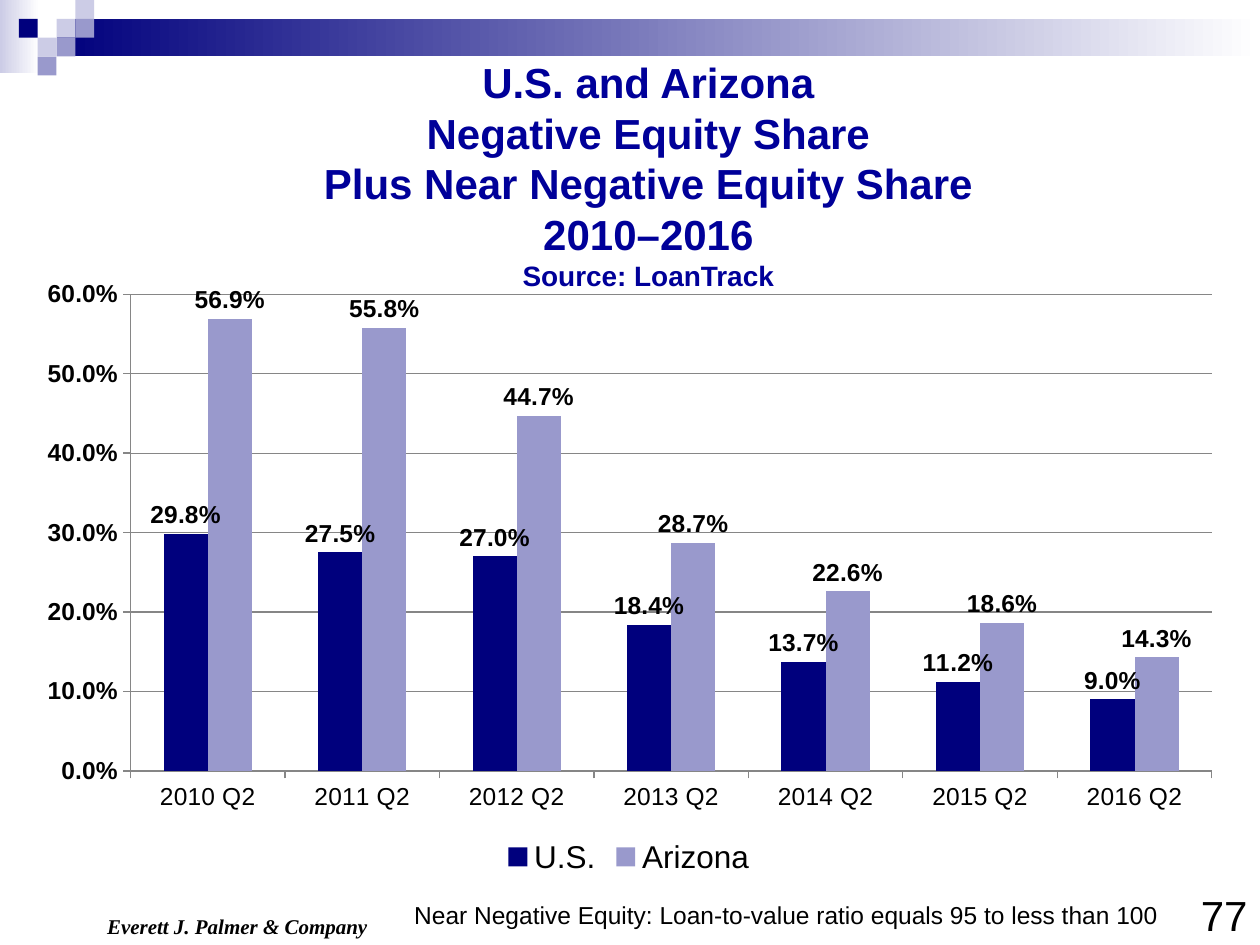
from dataclasses import dataclass

import pptx
import pptx.chart.data
import pptx.dml.color
import pptx.enum.chart
import pptx.enum.shapes
import pptx.enum.text
import pptx.oxml
import pptx.oxml.ns
import pptx.util
from pptx.util import Cm, Pt

COLOURS = {
    "navy": "00007D",
    "title": "000099",
    "lilac": "9999CC",
    "pale": "CCCCE6",
    "white": "FFFFFF",
    "black": "000000",
    "grid": "868686",
}
ALIGN = pptx.enum.text.PP_ALIGN
TILE = 0.38  # side of a corner tile, cm


@dataclass
class Box:
    left: float
    top: float
    width: float
    height: float

    def lengths(self) -> tuple:
        return Cm(self.left), Cm(self.top), Cm(self.width), Cm(self.height)


@dataclass
class Tile:
    column: int
    row: int
    colour: str


@dataclass
class Caption:
    text: str
    box: Box
    size: int
    family: str = "Arial"
    emphasis: bool = False
    align: ALIGN = ALIGN.LEFT


@dataclass
class Region:
    name: str
    shares: tuple
    colour: str


GRADIENTS = [
    (Box(0, 0, 0.79, 1.47), "pale"),
    (Box(3 * TILE, TILE, 24.26, 2 * TILE), "navy"),
]
TILES = [
    Tile(3, 1, "pale"), Tile(4, 0, "pale"), Tile(4, 1, "lilac"),
    Tile(2, 2, "pale"), Tile(1, 1, "navy"), Tile(3, 2, "lilac"),
    Tile(2, 3, "lilac"),
]
TITLE_LINES = [
    "U.S. and Arizona",
    "Negative Equity Share",
    "Plus Near Negative Equity Share",
    "2010–2016",
]
SOURCE = "Source: LoanTrack"
CAPTIONS = [
    Caption("Everett J. Palmer & Company", Box(1.91, 18.29, 6.35, 0.76), 12,
            "Times New Roman", emphasis=True),
    Caption("Near Negative Equity: Loan-to-value ratio equals 95 to less than 100",
            Box(8.1, 18.01, 15.57, 0.86), 14),
    Caption("77", Box(22.12, 17.81, 3.28, 1.27), 24, align=ALIGN.RIGHT),
]
QUARTERS = [f"{year} Q2" for year in range(2010, 2017)]
REGIONS = [
    Region("U.S.", (0.298, 0.275, 0.27, 0.184, 0.137, 0.112, 0.09), "navy"),
    Region("Arizona", (0.569, 0.558, 0.447, 0.287, 0.226, 0.186, 0.143), "lilac"),
]
PLOT_LAYOUT = {"x": 0.09, "y": 0.04, "w": 0.89, "h": 0.78}


def rgb(name: str) -> pptx.dml.color.RGBColor:
    return pptx.dml.color.RGBColor.from_string(COLOURS[name])


def style_font(font, size: int, colour: str = "black", bold: bool = False,
               family: str = "Arial") -> None:
    font.size = Pt(size)
    font.name = family
    font.bold = bold
    font.color.rgb = rgb(colour)


def add_rectangle(slide, box: Box):
    rectangle = slide.shapes.add_shape(
        pptx.enum.shapes.MSO_SHAPE.RECTANGLE, *box.lengths())
    rectangle.shadow.inherit = False
    rectangle.line.fill.background()
    return rectangle


def add_decoration(slide) -> None:
    for box, colour in GRADIENTS:
        fill = add_rectangle(slide, box).fill
        fill.gradient()
        fill.gradient_angle = 0
        for stop, position, name in zip(fill.gradient_stops, (0, 1), (colour, "white")):
            stop.position = position
            stop.color.rgb = rgb(name)
    for tile in TILES:
        box = Box(tile.column * TILE, tile.row * TILE, TILE, TILE)
        fill = add_rectangle(slide, box).fill
        fill.solid()
        fill.fore_color.rgb = rgb(tile.colour)


def add_title(slide) -> None:
    title = slide.shapes.title
    title.left, title.top, title.width, title.height = Box(6.1, 1.02, 13.94, 5.05).lengths()
    frame = title.text_frame
    frame.auto_size = pptx.enum.text.MSO_AUTO_SIZE.NONE
    frame.vertical_anchor = pptx.enum.text.MSO_ANCHOR.TOP
    frame.word_wrap = False
    frame.text = "\n".join(TITLE_LINES)
    for paragraph in frame.paragraphs:
        paragraph.alignment = ALIGN.CENTER
        style_font(paragraph.font, 24, "title", bold=True)
    years = frame.paragraphs[-1]
    years.add_line_break()
    source = years.add_run()
    source.text = SOURCE
    source.font.size = Pt(16)


def add_caption(slide, caption: Caption) -> None:
    frame = slide.shapes.add_textbox(*caption.box.lengths()).text_frame
    frame.word_wrap = True
    frame.text = caption.text
    paragraph = frame.paragraphs[0]
    paragraph.alignment = caption.align
    style_font(paragraph.font, caption.size, bold=caption.emphasis, family=caption.family)
    paragraph.font.italic = caption.emphasis


def fix_plot_area(chart) -> None:
    """Place the inner plot area by fractions of the chart."""
    plot_area = chart.plots[0]._element.getparent()
    for layout in plot_area.findall(pptx.oxml.ns.qn("c:layout")):
        plot_area.remove(layout)
    modes = "".join(f'<c:{key}Mode val="edge"/>' for key in "xy")
    sizes = "".join(f'<c:{key} val="{value}"/>' for key, value in PLOT_LAYOUT.items())
    plot_area.insert(0, pptx.oxml.parse_xml(
        f'<c:layout {pptx.oxml.ns.nsdecls("c")}><c:manualLayout>'
        f'<c:layoutTarget val="inner"/>{modes}{sizes}</c:manualLayout></c:layout>'))


def add_equity_chart(slide) -> None:
    data = pptx.chart.data.CategoryChartData(number_format="0.0%")
    data.categories = QUARTERS
    for region in REGIONS:
        data.add_series(region.name, region.shares)
    chart = slide.shapes.add_chart(
        pptx.enum.chart.XL_CHART_TYPE.COLUMN_CLUSTERED,
        *Box(0.43, 5.44, 24.49, 12.32).lengths(), data).chart
    style_font(chart.font, 18)
    chart.has_title = False
    chart.has_legend = True
    chart.legend.position = pptx.enum.chart.XL_LEGEND_POSITION.BOTTOM
    chart.legend.include_in_layout = False
    style_font(chart.legend.font, 18)

    for axis, bold in ((chart.category_axis, False), (chart.value_axis, True)):
        axis.major_tick_mark = pptx.enum.chart.XL_TICK_MARK.OUTSIDE
        axis.format.line.color.rgb = rgb("grid")
        style_font(axis.tick_labels.font, 14, bold=bold)
    shares = chart.value_axis
    shares.minimum_scale, shares.maximum_scale, shares.major_unit = 0, 0.6, 0.1
    shares.major_gridlines.format.line.color.rgb = rgb("grid")
    shares.tick_labels.number_format = "0.0%"
    shares.tick_labels.number_format_is_linked = False

    columns = chart.plots[0]
    columns.gap_width = 150
    columns.overlap = 0
    columns.vary_by_categories = False
    for series, region in zip(columns.series, REGIONS):
        series.format.fill.solid()
        series.format.fill.fore_color.rgb = rgb(region.colour)
        labels = series.data_labels
        labels.show_value = True
        labels.position = pptx.enum.chart.XL_LABEL_POSITION.OUTSIDE_END
        labels.number_format = "0.0%"
        labels.number_format_is_linked = False
        style_font(labels.font, 14, bold=True)
    fix_plot_area(chart)


def main() -> None:
    deck = pptx.Presentation()
    deck.slide_width, deck.slide_height = Cm(25.4), Cm(19.05)
    slide = deck.slides.add_slide(deck.slide_layouts.get_by_name("Title Only"))
    add_decoration(slide)
    add_title(slide)
    add_equity_chart(slide)
    for caption in CAPTIONS:
        add_caption(slide, caption)
    deck.save("out.pptx")


if __name__ == "__main__":
    main()
